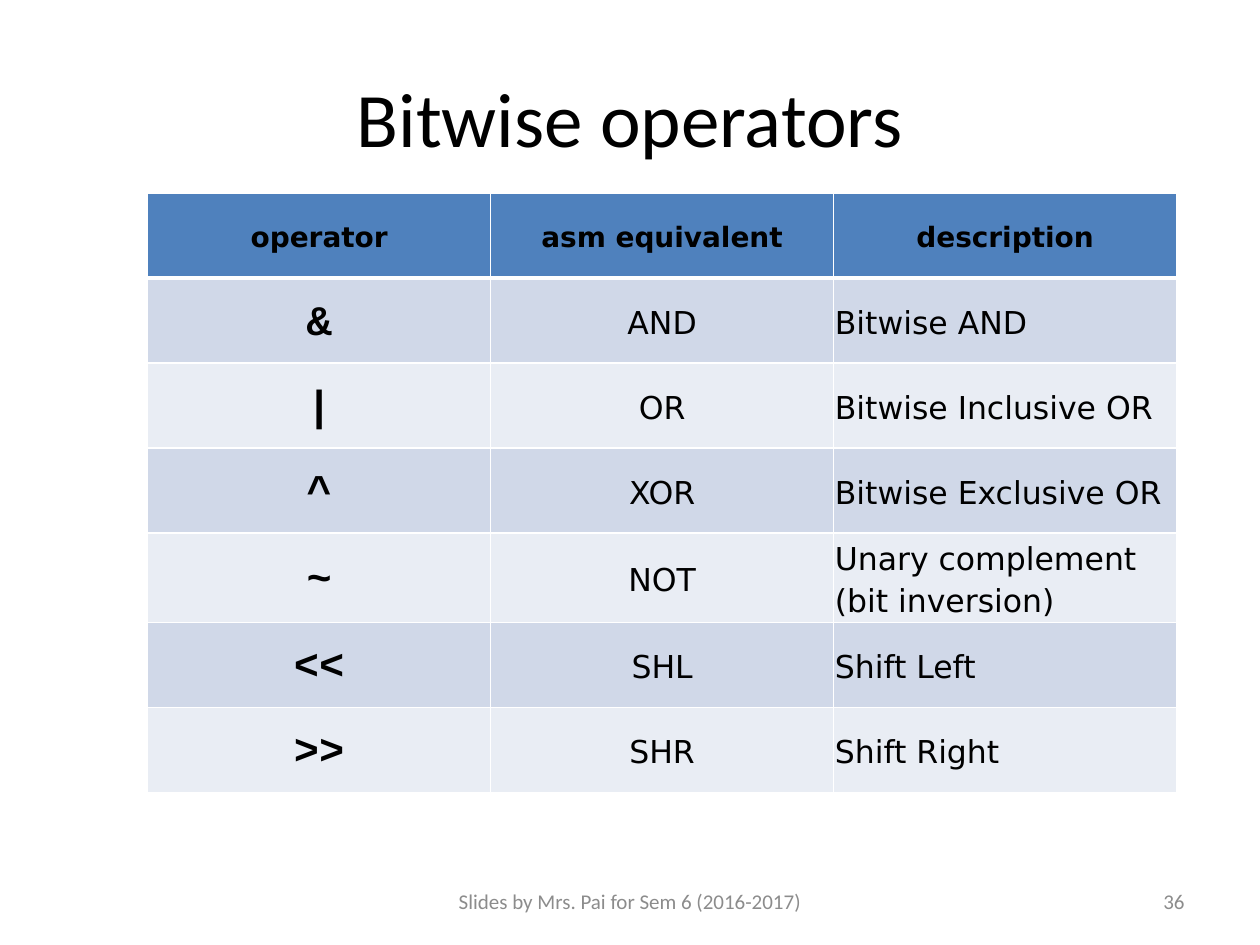
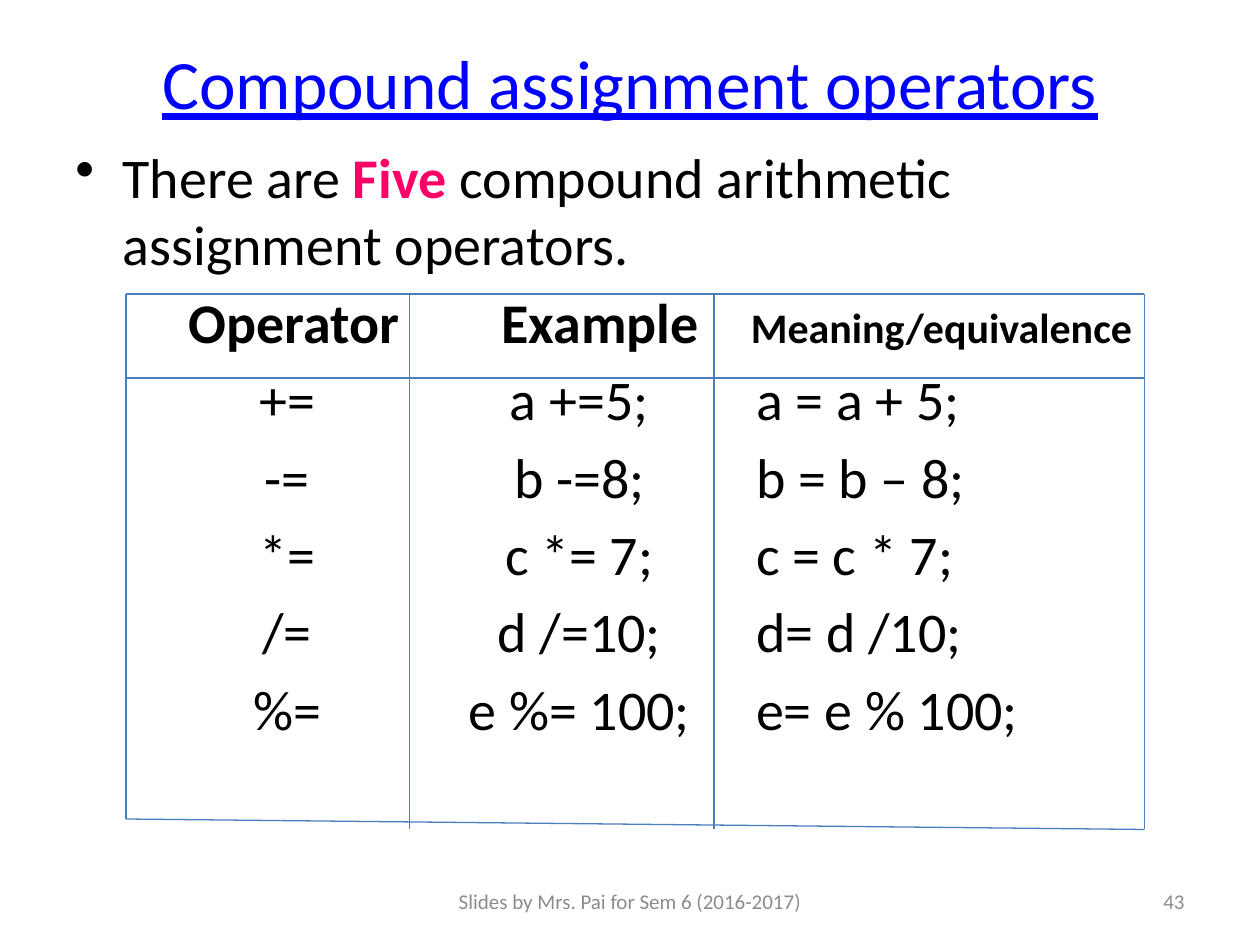
from dataclasses import dataclass
from typing import NamedTuple, Optional

import pptx
import pptx.dml.color
import pptx.enum.shapes
import pptx.enum.text
import pptx.oxml
import pptx.oxml.ns
import pptx.util

Pt = pptx.util.Pt
RGB = pptx.dml.color.RGBColor
ALIGN = pptx.enum.text.PP_ALIGN
MIDDLE = pptx.enum.text.MSO_ANCHOR.MIDDLE
TOP = pptx.enum.text.MSO_ANCHOR.TOP
NO_FIT = pptx.enum.text.MSO_AUTO_SIZE.NONE
STRAIGHT = pptx.enum.shapes.MSO_CONNECTOR.STRAIGHT
NSDECLS = pptx.oxml.ns.nsdecls("a")


@dataclass(frozen=True)
class Theme:
    font: str = "Calibri"
    table_font: str = "DejaVu Sans"
    code_font: str = "Courier New"
    text: str = "000000"
    white: str = "FFFFFF"
    blue_title: str = "0000FF"
    accent: str = "FF0066"
    muted: str = "8C8C8C"
    header_fill: str = "4F81BD"
    band_fills: tuple = ("D0D8E8", "E9EDF4")
    rule: str = "4B7EBC"
    title_size: float = 44
    small_title_size: float = 39.6
    body_size: float = 32
    heading_size: float = 24
    code_size: float = 24
    cell_size: float = 18
    header_size: float = 16
    footer_size: float = 12


THEME = Theme()


class Box(NamedTuple):
    left: float
    top: float
    width: float
    height: float


class Style(NamedTuple):
    size: float
    font: str = THEME.font
    color: str = THEME.text
    bold: bool = False
    underline: bool = False


class Line(NamedTuple):
    x1: float
    y1: float
    x2: float
    y2: float


TITLE = Style(THEME.title_size)
LINKED_TITLE = Style(THEME.small_title_size, color=THEME.blue_title, underline=True)
BODY = Style(THEME.body_size)
BODY_BOLD = BODY._replace(bold=True)
EMPHASIS = BODY_BOLD._replace(color=THEME.accent)
HEADING = BODY_BOLD._replace(size=THEME.heading_size)
FOOTER = Style(THEME.footer_size, color=THEME.muted)
HEADER_CELL = Style(THEME.header_size, THEME.table_font, bold=True)
CODE_CELL = Style(THEME.code_size, THEME.code_font, bold=True)
CELL = Style(THEME.cell_size, THEME.table_font)

FOOTER_TEXT = "Slides by Mrs. Pai for Sem 6 (2016-2017)"
FOOTER_BOX = Box(246, 500.5, 228, 28.75)
NUMBER_BOX = Box(516, 500.5, 168, 28.75)

BITWISE_HEADER = ("operator", "asm equivalent", "description")
BITWISE_ROWS = (
    ("&", "AND", "Bitwise AND"),
    ("|", "OR", "Bitwise Inclusive OR"),
    ("^", "XOR", "Bitwise Exclusive OR"),
    ("~", "NOT", "Unary complement (bit inversion)"),
    ("<<", "SHL", "Shift Left"),
    (">>", "SHR", "Shift Right"),
)
BITWISE_BOX = Box(84.4, 110.2, 588, 340.2)

COMPOUND_ROWS = (
    ("+=", "a +=5;", "a = a + 5;"),
    ("-=", "b -=8;", "b = b – 8;"),
    ("*=", "c *= 7;", "c = c * 7;"),
    ("/=", "d /=10;", "d= d /10;"),
    ("%=", "e %= 100;", "e= e % 100;"),
)
HEADING_TABS = (125, 300, 386)
ROW_TABS = (121, 288, 389)
PARAGRAPH_GAP = 5.8

GRID_LEFT, GRID_RIGHT = 72, 654
GRID_TOP, GRID_HEADER = 168, 216
GRID_BOTTOM_LEFT, GRID_BOTTOM = 468, 474


def add_run(p, text: str, style: Style) -> None:
    r = p.add_run()
    r.text = text
    r.font.name = style.font
    r.font.size = Pt(style.size)
    r.font.bold = style.bold
    r.font.underline = style.underline
    r.font.color.rgb = RGB.from_string(style.color)


def add_text_box(slide, box: Box, anchor=TOP):
    tf = slide.shapes.add_textbox(*map(Pt, box)).text_frame
    tf.word_wrap = True
    tf.vertical_anchor = anchor
    return tf


def add_titled_slide(prs, title: str, box: Box, style: Style, number: int):
    """Add a title-only slide with its footer and slide number."""
    slide = prs.slides.add_slide(prs.slide_layouts[5])
    sp = slide.shapes.title
    sp.left, sp.top, sp.width, sp.height = map(Pt, box)
    tf = sp.text_frame
    tf.auto_size = NO_FIT
    tf.vertical_anchor = MIDDLE
    tf.paragraphs[0].alignment = ALIGN.CENTER
    add_run(tf.paragraphs[0], title, style)
    for text, place, align in (
        (FOOTER_TEXT, FOOTER_BOX, ALIGN.CENTER),
        (str(number), NUMBER_BOX, ALIGN.RIGHT),
    ):
        p = add_text_box(slide, place, MIDDLE).paragraphs[0]
        p.alignment = align
        add_run(p, text, FOOTER)
    return slide


def set_borders(cell, bottom: float) -> None:
    """Draw white cell borders, 1 pt except for the bottom one."""
    tc_pr = cell._tc.get_or_add_tcPr()
    for side, width in (("L", 1), ("R", 1), ("T", 1), ("B", bottom)):
        tc_pr.append(pptx.oxml.parse_xml(
            f'<a:ln{side} {NSDECLS} w="{Pt(width)}"><a:solidFill>'
            f'<a:srgbClr val="{THEME.white}"/></a:solidFill></a:ln{side}>'
        ))


def fill_cell(cell, text: str, style: Style, fill: str, align, bottom: float) -> None:
    set_borders(cell, bottom)
    cell.fill.solid()
    cell.fill.fore_color.rgb = RGB.from_string(fill)
    cell.margin_left = cell.margin_right = Pt(0.72)
    cell.margin_top = cell.margin_bottom = Pt(0.72)
    cell.vertical_anchor = MIDDLE
    p = cell.text_frame.paragraphs[0]
    p.alignment = align
    p.line_spacing = 1.15
    add_run(p, text, style)


def add_bitwise_table(slide) -> None:
    rows = (BITWISE_HEADER, *BITWISE_ROWS)
    table = slide.shapes.add_table(
        len(rows), len(BITWISE_HEADER), *map(Pt, BITWISE_BOX)
    ).table
    for row in table.rows:
        row.height = Pt(BITWISE_BOX.height / len(rows))
    for i, values in enumerate(rows):
        header = i == 0
        fill = THEME.header_fill if header else THEME.band_fills[(i - 1) % 2]
        styles = (HEADER_CELL,) * 3 if header else (CODE_CELL, CELL, CELL)
        for j, (text, style) in enumerate(zip(values, styles)):
            align = ALIGN.CENTER if header or j < 2 else ALIGN.LEFT
            fill_cell(table.cell(i, j), text, style, fill, align, 3 if header else 1)


def add_bullet(p) -> None:
    p_pr = p._p.get_or_add_pPr()
    p_pr.set("marL", str(Pt(27)))
    p_pr.set("indent", str(-Pt(27)))
    p_pr.append(pptx.oxml.parse_xml(f'<a:buChar {NSDECLS} char="•"/>'))


def add_tabbed_row(tf, values: tuple, styles: tuple, tabs: tuple) -> None:
    """Add a line with two centred columns and a left-aligned third one."""
    p = tf.add_paragraph()
    p.space_before = Pt(PARAGRAPH_GAP)
    stops = "".join(
        f'<a:tab pos="{Pt(pos)}" algn="{align}"/>'
        for pos, align in zip(tabs, ("ctr", "ctr", "l"))
    )
    p._p.get_or_add_pPr().append(
        pptx.oxml.parse_xml(f"<a:tabLst {NSDECLS}>{stops}</a:tabLst>")
    )
    for text, style in zip(values, styles):
        add_run(p, "\t" + text, style)


def add_compound_text(slide) -> None:
    tf = add_text_box(slide, Box(36, 78, 648, 404.4))
    p = tf.paragraphs[0]
    p.space_before = Pt(PARAGRAPH_GAP)
    add_bullet(p)
    add_run(p, "There are ", BODY)
    add_run(p, "Five ", EMPHASIS)
    add_run(p, "compound arithmetic assignment operators.", BODY)
    add_tabbed_row(
        tf,
        ("Operator", "Example", "Meaning/equivalence"),
        (BODY_BOLD, BODY_BOLD, HEADING),
        HEADING_TABS,
    )
    for values in COMPOUND_ROWS:
        add_tabbed_row(tf, values, (BODY,) * 3, ROW_TABS)


def add_compound_grid(slide) -> None:
    lines = [Line(GRID_LEFT, y, GRID_RIGHT, y) for y in (GRID_TOP, GRID_HEADER)]
    lines += [Line(x, GRID_TOP, x, GRID_BOTTOM) for x in (234, 408, GRID_RIGHT)]
    lines += [
        Line(GRID_LEFT, GRID_TOP, GRID_LEFT, GRID_BOTTOM_LEFT),
        Line(GRID_LEFT, GRID_BOTTOM_LEFT, GRID_RIGHT, GRID_BOTTOM),
    ]
    grid = slide.shapes.add_group_shape()
    for line in lines:
        s = grid.shapes.add_connector(STRAIGHT, *map(Pt, line))
        s.line.width = Pt(0.75)
        s.line.color.rgb = RGB.from_string(THEME.rule)
        s._element.spPr.append(pptx.oxml.parse_xml(f"<a:effectLst {NSDECLS}/>"))


def main() -> None:
    prs = pptx.Presentation()
    prs.slide_width, prs.slide_height = Pt(720), Pt(540)

    bitwise = add_titled_slide(
        prs, "Bitwise operators", Box(36, 21.6, 648, 90), TITLE, 36
    )
    add_bitwise_table(bitwise)

    compound = add_titled_slide(
        prs, "Compound assignment operators", Box(36, 21.6, 648, 50.4), LINKED_TITLE, 43
    )
    add_compound_text(compound)
    add_compound_grid(compound)

    prs.save("out.pptx")


if __name__ == "__main__":
    main()
